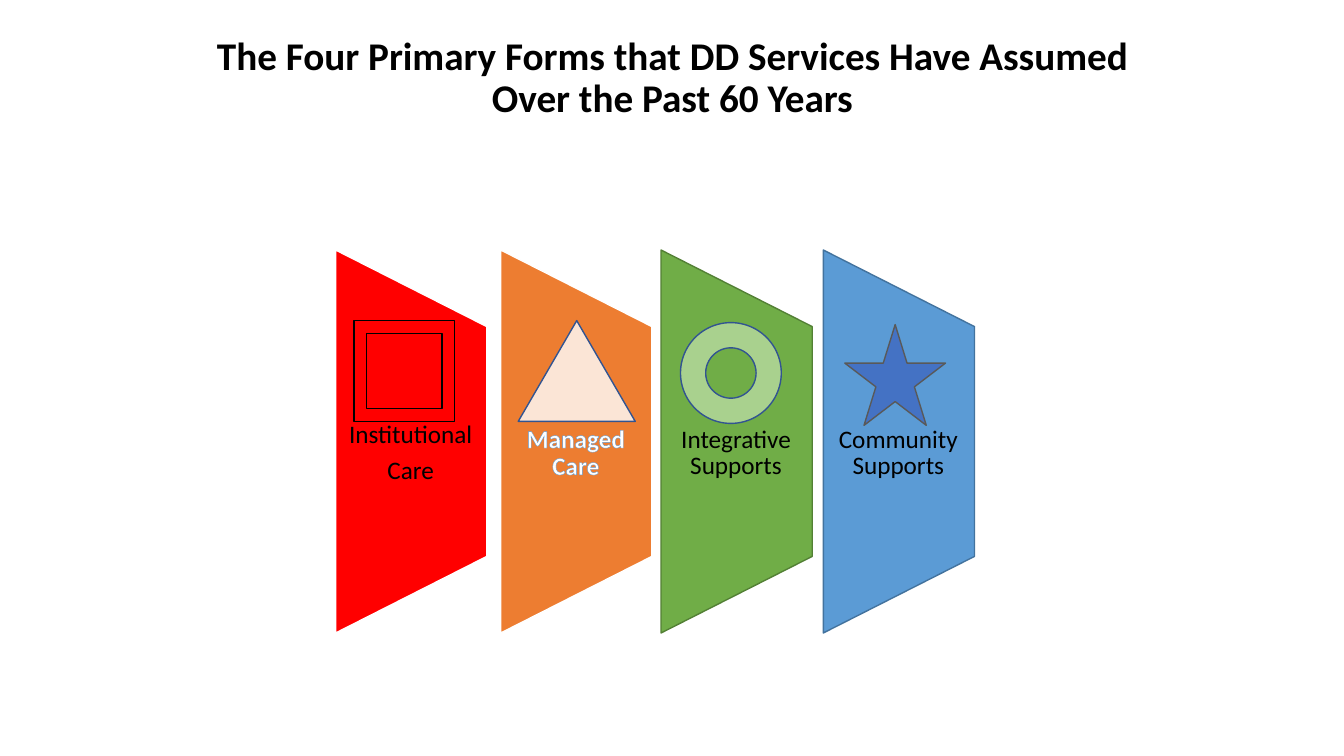
import pptx
import pptx.dml.color
import pptx.enum.shapes
import pptx.enum.text
import pptx.util
from lxml import etree

Cm = pptx.util.Cm
Pt = pptx.util.Pt
RGB = pptx.dml.color.RGBColor
SHAPE = pptx.enum.shapes.MSO_SHAPE
MIDDLE = pptx.enum.text.MSO_ANCHOR.MIDDLE
CENTER = pptx.enum.text.PP_ALIGN.CENTER

BLACK = RGB(0x00, 0x00, 0x00)
WHITE = RGB(0xFF, 0xFF, 0xFF)
RED = RGB(0xFF, 0x00, 0x00)
ORANGE = RGB(0xED, 0x7D, 0x31)
GREEN = RGB(0x70, 0xAD, 0x47)
DARK_GREEN = RGB(0x53, 0x80, 0x35)
SKY = RGB(0x5B, 0x9B, 0xD5)
DARK_SKY = RGB(0x43, 0x73, 0x9E)
BLUE = RGB(0x44, 0x72, 0xC4)
NAVY = RGB(0x32, 0x54, 0x91)
GREY = RGB(0x59, 0x59, 0x59)
PALE_GREEN = RGB(0xA9, 0xD1, 0x8E)
PEACH = RGB(0xFB, 0xE5, 0xD6)

PANEL_LENGTH, PANEL_WIDTH, PANEL_TOP = 9.65, 3.81, 6.3
LABEL_TOP, LABEL_HEIGHT = 8.53, 5.79
ICON_HEIGHT = 2.54


class Deck:
    """Holds the text style and the current slide, and adds elements to it."""

    def __init__(self, width, height, font):
        self.prs = pptx.Presentation()
        self.prs.slide_width, self.prs.slide_height = Cm(width), Cm(height)
        self.font = font
        self.slide = None

    def new_slide(self):
        self.slide = self.prs.slides.add_slide(self.prs.slide_layouts[5])

    def format(self, p, size, color, bold, spacing):
        p.alignment = CENTER
        p.line_spacing = spacing
        p.font.name = self.font
        p.font.size = Pt(size)
        p.font.bold = bold
        p.font.color.rgb = color

    def title(self, lines, left, top, width, height):
        sp = self.slide.shapes.title
        sp.left, sp.top, sp.width, sp.height = map(Cm, (left, top, width, height))
        tf = sp.text_frame
        tf.word_wrap = True
        tf.vertical_anchor = MIDDLE
        tf.margin_bottom = Cm(1.88)
        p = tf.paragraphs[0]
        p.add_run().text = lines[0]
        for line in lines[1:]:
            p.add_line_break()
            p.add_run().text = line
        self.format(p, 28, BLACK, True, 0.9)

    def shape(self, kind, left, top, width, height, fill, line, rotation=0):
        sp = self.slide.shapes.add_shape(kind, *map(Cm, (left, top, width, height)))
        sp.rotation = rotation
        sp.shadow.inherit = False
        sp.fill.solid()
        sp.fill.fore_color.rgb = fill
        sp.line.color.rgb = line
        sp.line.width = Pt(1)

    def panel(self, left, fill, line):
        shift = (PANEL_LENGTH - PANEL_WIDTH) / 2
        self.shape(SHAPE.FLOWCHART_MANUAL_OPERATION, left - shift, PANEL_TOP + shift,
                   PANEL_LENGTH, PANEL_WIDTH, fill, line, 270)

    def label(self, left, paragraphs, color, bold, outline):
        box = self.slide.shapes.add_textbox(
            *map(Cm, (left, LABEL_TOP, PANEL_WIDTH, LABEL_HEIGHT)))
        tf = box.text_frame
        tf.word_wrap = True
        tf.vertical_anchor = MIDDLE
        tf.margin_left, tf.margin_right = Cm(0.3), Cm(0.33)
        tf.margin_top = tf.margin_bottom = 0
        for i, text in enumerate(paragraphs):
            p = tf.add_paragraph() if i else tf.paragraphs[0]
            r = p.add_run()
            r.text = text
            self.format(p, 18, color, bold, 0.89)
            if i:
                p.space_before = Pt(6.2)
            if outline:
                self.outline(r, outline)

    def outline(self, r, color):
        ns = "{http://schemas.openxmlformats.org/drawingml/2006/main}"
        ln = etree.Element(ns + "ln", w=str(Pt(0.8)))
        fill = etree.SubElement(ln, ns + "solidFill")
        etree.SubElement(fill, ns + "srgbClr", val=str(color))
        r._r.get_or_add_rPr().insert(0, ln)


def main():
    deck = Deck(33.87, 19.05, "Calibri")
    deck.new_slide()
    deck.title(["The Four Primary Forms that DD Services Have Assumed",
                "Over the Past 60 Years"], 2.34, 1.02, 29.21, 3.68)

    forms = [
        (8.46, RED, WHITE, ["Institutional", "Care"], BLACK, False, None),
        (12.62, ORANGE, WHITE, ["Managed Care"], WHITE, True, SKY),
        (16.66, GREEN, DARK_GREEN, ["Integrative Supports"], BLACK, False, None),
        (20.75, SKY, DARK_SKY, ["Community Supports"], BLACK, False, None),
    ]
    for left, fill, line, paragraphs, color, bold, outline in forms:
        deck.panel(left, fill, line)
        deck.label(left, paragraphs, color, bold, outline)

    icons = [
        (SHAPE.FRAME, 8.92, 8.08, 2.54, RED, BLACK),
        (SHAPE.ISOSCELES_TRIANGLE, 13.06, 8.08, 2.95, PEACH, NAVY),
        (SHAPE.DONUT, 17.15, 8.13, 2.54, PALE_GREEN, NAVY),
        (SHAPE.STAR_5_POINT, 21.29, 8.18, 2.54, BLUE, GREY),
    ]
    for kind, left, top, width, fill, line in icons:
        deck.shape(kind, left, top, width, ICON_HEIGHT, fill, line)

    deck.prs.save("out.pptx")


if __name__ == "__main__":
    main()
